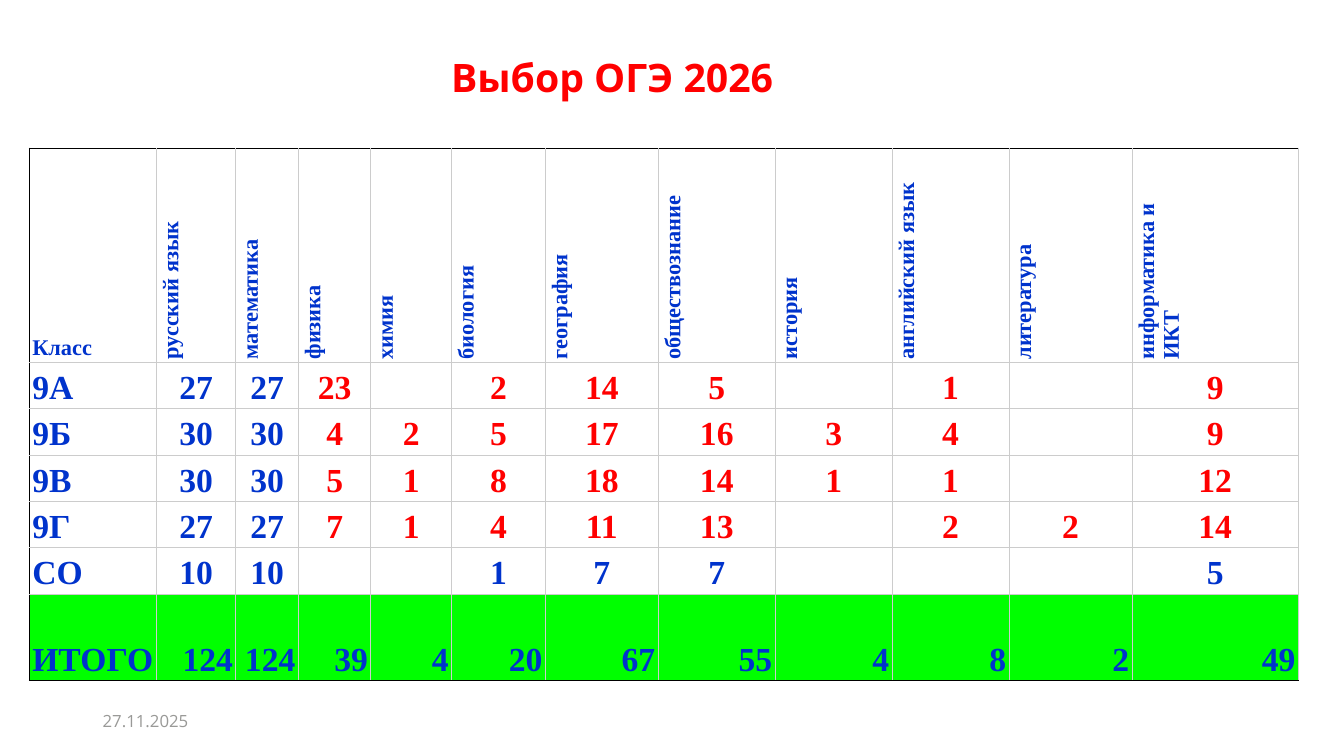
from pptx import Presentation
from pptx import oxml, util as u
from pptx.dml.color import RGBColor
from pptx.enum import text as t
from pptx.oxml import ns

BLUE, RED, GREEN, WHITE = "0033CC", "FF0000", "00FF00", "FFFFFF"
BLACK, GREY, DATE_GREY = "000000", "CCCCCC", "999997"
LEFT, CENTER, RIGHT = t.PP_ALIGN.LEFT, t.PP_ALIGN.CENTER, t.PP_ALIGN.RIGHT

COLUMN_WIDTHS = [1.26, 0.79, 0.62, 0.72, 0.8, 0.93, 1.12, 1.16, 1.16, 1.16, 1.22, 1.65]
ROW_HEIGHTS = [1.74] + [0.46] * 5 + [0.86]
ROWS = [
    ["Класс", "русский язык", "математика", "физика", "химия", "биология", "география",
     "обществознание", "история", "английский язык", "литература", "информатика и ИКТ"],
    ["9А", "27", "27", "23", "", "2", "14", "5", "", "1", "", "9"],
    ["9Б", "30", "30", "4", "2", "5", "17", "16", "3", "4", "", "9"],
    ["9В", "30", "30", "5", "1", "8", "18", "14", "1", "1", "", "12"],
    ["9Г", "27", "27", "7", "1", "4", "11", "13", "", "2", "2", "14"],
    ["СО", "10", "10", "", "", "1", "7", "7", "", "", "", "5"],
    ["ИТОГО", "124", "124", "39", "4", "20", "67", "55", "4", "8", "2", "49"],
]
HEADER, SPECIAL, TOTAL = 0, 5, 6


def color(value):
    """Turn a hex string into a colour."""
    return RGBColor.from_string(value)


def write(frame, words, size=24, font="Times New Roman", fill=BLUE, bold=True,
          align=LEFT, spacing=None):
    """Put one formatted paragraph into a text frame."""
    para = frame.paragraphs[0]
    para.alignment = align
    para.line_spacing = spacing
    para.font.size = u.Pt(size)
    if words:
        span = para.add_run()
        span.text = words
        span.font.size = u.Pt(size)
        span.font.name = font
        span.font.bold = bold
        span.font.color.rgb = color(fill)


def place(shape, box):
    """Move a shape to a box given in inches."""
    shape.left, shape.top, shape.width, shape.height = map(u.Inches, box)


def add_title(page, box):
    """Fill the title placeholder."""
    title = page.shapes.title
    place(title, box)
    title.text_frame.vertical_anchor = t.MSO_ANCHOR.MIDDLE
    write(title.text_frame, "Выбор ОГЭ 2026", size=28, font="Open Sans", fill=RED,
          align=CENTER, spacing=0.9)


def add_date(page, box):
    """Write the date at the foot of the page."""
    frame = page.shapes.add_textbox(*map(u.Inches, box)).text_frame
    frame.word_wrap = True
    frame.vertical_anchor = t.MSO_ANCHOR.MIDDLE
    write(frame, "27.11.2025", size=12, font="Open Sans", fill=DATE_GREY, bold=False)


def set_borders(cell, sides):
    """Draw the cell edges, given as pairs of side and colour."""
    properties = cell._tc.get_or_add_tcPr()
    for index, (side, value) in enumerate(sides):
        properties.insert(index, oxml.parse_xml(
            f'<a:ln{side} {ns.nsdecls("a")} w="9525"><a:solidFill>'
            f'<a:srgbClr val="{value}"/></a:solidFill></a:ln{side}>'))


def format_cell(cell, row, column, words):
    """Write and style one cell according to its row and column."""
    cell.margin_left = cell.margin_right = u.Inches(0.03)
    cell.margin_top = cell.margin_bottom = u.Inches(0.02)
    cell.vertical_anchor = t.MSO_ANCHOR.BOTTOM
    cell.fill.solid()
    cell.fill.fore_color.rgb = color(GREEN if row == TOTAL else WHITE)
    if row == HEADER or column == 0:
        align = LEFT
    else:
        align = RIGHT if row == TOTAL else CENTER
    chosen = HEADER < row < SPECIAL and column > 2
    write(cell.text_frame, words, size=16 if row == HEADER else 24,
          fill=RED if chosen else BLUE, align=align)
    if row == HEADER and column:
        cell._tc.get_or_add_tcPr().set("vert", "vert270")
    set_borders(cell, [("L", GREY if column else BLACK), ("R", GREY),
                       ("T", BLACK if row == HEADER else GREY),
                       ("B", BLACK if row == TOTAL else GREY)])


def add_choices(page, box):
    """Build the table of exam choices by class."""
    table = page.shapes.add_table(len(ROWS), len(COLUMN_WIDTHS), *map(u.Inches, box)).table
    table.first_row = table.horz_banding = False
    for column, width in zip(table.columns, COLUMN_WIDTHS):
        column.width = u.Inches(width)
    for row, height in zip(table.rows, ROW_HEIGHTS):
        row.height = u.Inches(height)
    for row, values in enumerate(ROWS):
        for column, words in enumerate(values):
            format_cell(table.cell(row, column), row, column, words)


def main():
    """Build and save the deck."""
    deck = Presentation()
    deck.slide_width, deck.slide_height = u.Inches(13.33), u.Inches(7.5)
    page = deck.slides.add_slide(deck.slide_layouts[5])
    add_title(page, (2.41, 0.34, 7.32, 0.91))
    add_date(page, (0.92, 6.95, 3, 0.4))
    add_choices(page, (0.29, 1.47, sum(COLUMN_WIDTHS), sum(ROW_HEIGHTS)))
    deck.save("out.pptx")


if __name__ == "__main__":
    main()
